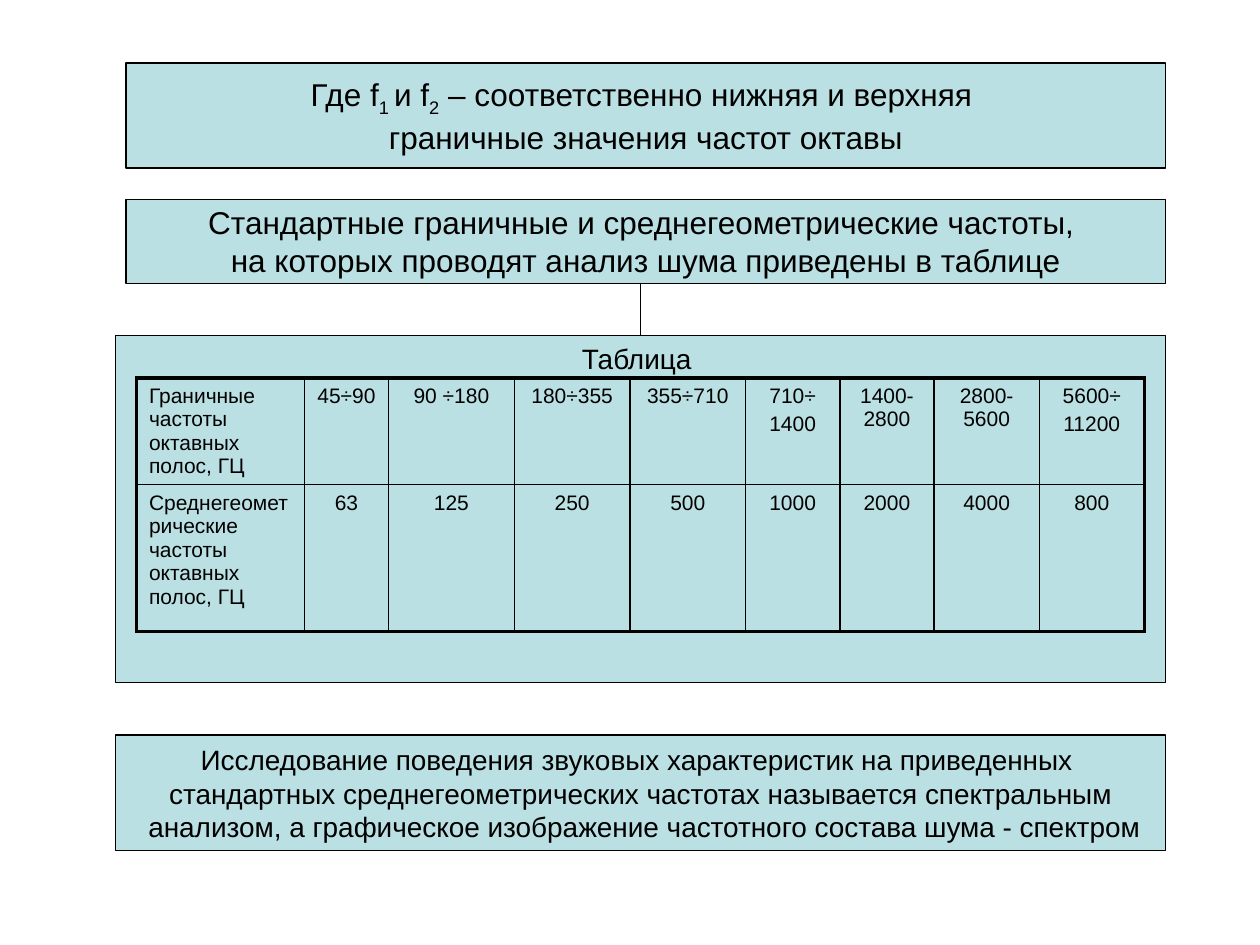
from lxml import etree
from pptx import Presentation
from pptx import util as u
from pptx.dml.color import RGBColor
from pptx.enum import shapes, text
from pptx.oxml import ns

BLACK = RGBColor(0, 0, 0)
PALE_TEAL = RGBColor(0xBB, 0xE0, 0xE3)
SUBSCRIPT_MARK = "|"


def write(frame, lines, size=18, align=text.PP_ALIGN.CENTER, before=0):
    for index, line in enumerate(lines):
        para = frame.paragraphs[0] if index == 0 else frame.add_paragraph()
        para.alignment = align
        para.space_before = u.Pt(before)
        for position, part in enumerate(line.split(SUBSCRIPT_MARK)):
            span = para.add_run()
            span.text = part
            span.font.name = "Arial"
            span.font.size = u.Pt(size)
            span.font.color.rgb = BLACK
            if position % 2:
                span.font._element.set("baseline", "-25000")


def draw_border(cell, side, width):
    line = etree.SubElement(cell._tc.get_or_add_tcPr(), ns.qn("a:ln" + side), w=str(u.Pt(width)))
    fill = etree.SubElement(line, ns.qn("a:solidFill"))
    etree.SubElement(fill, ns.qn("a:srgbClr"), val=str(BLACK))


deck = Presentation()
deck.slide_width, deck.slide_height = u.Cm(25.4), u.Cm(19.05)
page = deck.slides.add_slide(deck.slide_layouts[6])

panels = [
    (2.54, 1.27, 20.96, 2.12, 18, text.MSO_ANCHOR.MIDDLE, [
        "Где f|1 |и f|2| – соответственно нижняя и верхняя ",
        "граничные значения частот октавы"]),
    (2.54, 4.02, 20.96, 1.69, 18, text.MSO_ANCHOR.MIDDLE, [
        "Стандартные граничные и среднегеометрические частоты, ",
        "на которых проводят анализ шума приведены в таблице"]),
    (2.33, 6.77, 21.17, 6.99, 16, text.MSO_ANCHOR.TOP, ["Таблица "]),
    (2.33, 14.82, 21.17, 2.33, 16, text.MSO_ANCHOR.MIDDLE, [
        "Исследование поведения звуковых характеристик на приведенных ",
        "стандартных среднегеометрических частотах называется спектральным",
        " анализом, а графическое изображение частотного состава шума - спектром"]),
]
boxes = []
for left, top, width, height, size, anchor, lines in panels:
    box = page.shapes.add_shape(shapes.MSO_SHAPE.RECTANGLE,
                                u.Cm(left), u.Cm(top), u.Cm(width), u.Cm(height))
    box.shadow.inherit = False
    box.fill.solid()
    box.fill.fore_color.rgb = PALE_TEAL
    box.line.color.rgb = BLACK
    box.line.width = u.Pt(0.75)
    box.text_frame.word_wrap = False
    box.text_frame.vertical_anchor = anchor
    write(box.text_frame, lines, size=size)
    boxes.append(box)

heading_box, table_box = boxes[1:3]
middle = table_box.left + table_box.width // 2

columns = [3.39, 1.69, 2.54, 2.33, 2.33, 1.9, 1.9, 2.12, 2.12]
rows = [2.12, 2.96]
frequencies = [
    ["Граничные частоты октавных полос, ГЦ", "45÷90", "90 ÷180", "180÷355", "355÷710",
     "710÷\n1400", "1400-2800", "2800-5600", "5600÷\n11200"],
    ["Среднегеометрические частоты октавных полос, ГЦ", "63", "125", "250", "500",
     "1000", "2000", "4000", "800"],
]
table = page.shapes.add_table(len(rows), len(columns), u.Cm(2.75), u.Cm(7.62),
                              u.Cm(sum(columns)), u.Cm(sum(rows))).table
table.first_row = table.horz_banding = False
for column, width in zip(table.columns, columns):
    column.width = u.Cm(width)
for row, height in zip(table.rows, rows):
    row.height = u.Cm(height)
for r, values in enumerate(frequencies):
    for c, value in enumerate(values):
        cell = table.cell(r, c)
        write(cell.text_frame, value.split("\n"), size=12, before=2.4,
              align=text.PP_ALIGN.CENTER if c else text.PP_ALIGN.LEFT)
        outer = {"L": c == 0, "R": c == len(columns) - 1, "T": r == 0, "B": r == len(rows) - 1}
        for side, is_outer in outer.items():
            draw_border(cell, side, 2.25 if is_outer else 1)
        cell.fill.background()

link = page.shapes.add_connector(shapes.MSO_CONNECTOR.STRAIGHT, middle,
                                 heading_box.top + heading_box.height, middle, table_box.top)
link.end_connect(table_box, 0)
link.line.color.rgb = BLACK
link.line.width = u.Pt(0.75)
etree.SubElement(link._element.spPr, ns.qn("a:effectLst"))

deck.save("out.pptx")
